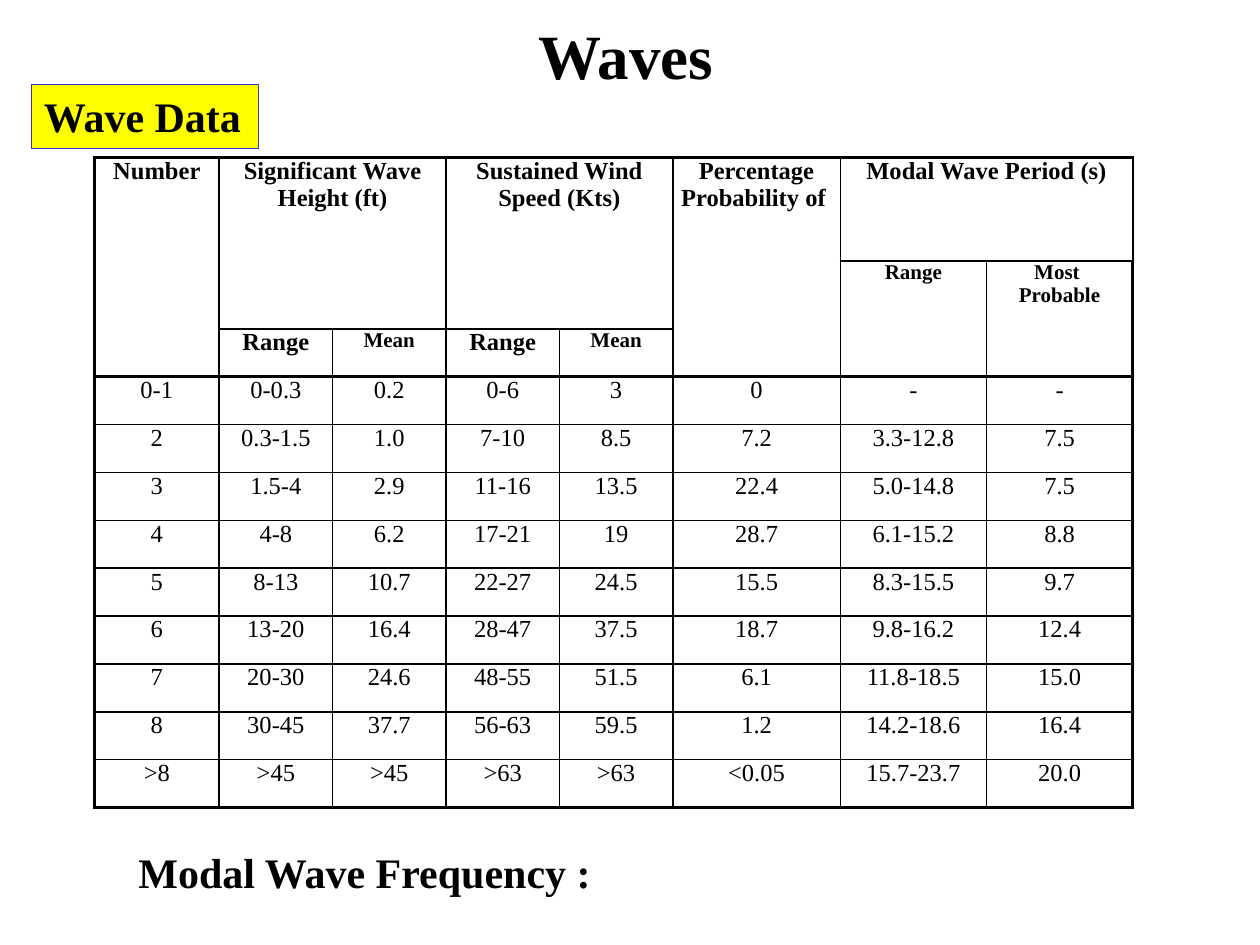
from lxml import etree
from pptx import Presentation, util as u
from pptx.dml import color
from pptx.enum import shapes, text
from pptx.oxml import ns

rgb = color.RGBColor.from_string
deck = Presentation()
deck.slide_width, deck.slide_height = u.Inches(10), u.Inches(7.5)
X, Y = deck.slide_width / 100, deck.slide_height / 100  # one percent
page = deck.slides.add_slide(deck.slide_layouts[5])


def write(frame, words, size, bold, align):
    frame.text = words
    for para in frame.paragraphs:
        para.alignment = align
        look = {"name": "Times New Roman", "size": u.Pt(size), "bold": bold}
        for key, val in look.items():
            setattr(para.font, key, val)
        para.font.color.rgb = rgb("000000")


# Title and labels
title = page.shapes.title
label = page.shapes.add_shape(shapes.MSO_SHAPE.RECTANGLE, 0, 0, 0, 0)
label.shadow.inherit = False
label.fill.solid()
label.fill.fore_color.rgb = rgb("FFFF00")
label.line.color.rgb = rgb("3333CC")
label.line.width = u.Pt(0.75)
note = page.shapes.add_textbox(0, 0, 0, 0)

for box, words, size, left, top, wide, high in (
    (title, "Waves", 36, 41.7, 1.07, 16.2, 9.33),
    (label, "Wave Data", 24, 2.5, 8.93, 18, 6.8),
    (note, "Modal Wave Frequency :", 24, 10, 88.93, 38.2, 6.67),
):
    spot = {"left": left * X, "top": top * Y, "width": wide * X, "height": high * Y}
    for key, val in spot.items():
        setattr(box, key, int(val))
    form = {
        "word_wrap": False,
        "auto_size": text.MSO_AUTO_SIZE.SHAPE_TO_FIT_TEXT,
        "vertical_anchor": text.MSO_ANCHOR.TOP,
    }
    for key, val in form.items():
        setattr(box.text_frame, key, val)
    write(box.text_frame, words, size, True, text.PP_ALIGN.LEFT)

# Wave table
HEAD = 3
rows = [
    ["Number", "Significant Wave Height (ft)", "", "Sustained Wind Speed (Kts)", "",
     "Percentage Probability of ", "Modal Wave Period (s)", ""],
    ["", "", "", "", "", "", "Range", "Most \nProbable"],
    ["", "Range", "Mean", "Range", "Mean", "", "", ""],
    ["0-1", "0-0.3", "0.2", "0-6", "3", "0", "-", "-"],
    ["2", "0.3-1.5", "1.0", "7-10", "8.5", "7.2", "3.3-12.8", "7.5"],
    ["3", "1.5-4", "2.9", "11-16", "13.5", "22.4", "5.0-14.8", "7.5"],
    ["4", "4-8", "6.2", "17-21", "19", "28.7", "6.1-15.2", "8.8"],
    ["5", "8-13", "10.7", "22-27", "24.5", "15.5", "8.3-15.5", "9.7"],
    ["6", "13-20", "16.4", "28-47", "37.5", "18.7", "9.8-16.2", "12.4"],
    ["7", "20-30", "24.6", "48-55", "51.5", "6.1", "11.8-18.5", "15.0"],
    ["8", "30-45", "37.7", "56-63", "59.5", "1.2", "14.2-18.6", "16.4"],
    [">8", ">45", ">45", ">63", ">63", "<0.05", "15.7-23.7", "20.0"],
]
wides = [9.9] + [9] * 4 + [13.3] + [11.6] * 2
highs = [10.93, 7.2] + [5.07] * 10
pairs = [(0, 1), (0, 3), (0, 6), (1, 1), (1, 3)]  # cells two columns wide
small = [(1, 6), (1, 7), (2, 2), (2, 4)]
# cells with no line above them
loose = [(1, col) for col in range(6)] + [(2, col) for col in (0, 5, 6, 7)]

grid = page.shapes.add_table(
    len(rows), len(wides), int(7.5 * X), int(16.67 * Y),
    int(sum(wides) * X), int(sum(highs) * Y)).table
grid.first_row = grid.horz_banding = False
for col, wide in zip(grid.columns, wides):
    col.width = int(wide * X)
for row, high in zip(grid.rows, highs):
    row.height = int(high * Y)
for r, c in pairs:
    grid.cell(r, c).merge(grid.cell(r, c + 1))


def edge(cell, tag, place, width):
    """Draw one border of a cell; a width of 0 hides it."""
    line = etree.Element(ns.qn("a:" + tag), w=str(u.Pt(width)))
    if width:
        fill = etree.SubElement(line, ns.qn("a:solidFill"))
        etree.SubElement(fill, ns.qn("a:srgbClr"), val="000000")
    else:
        etree.SubElement(line, ns.qn("a:noFill"))
    cell._tc.get_or_add_tcPr().insert(place, line)


for r, row in enumerate(rows):
    for c, words in enumerate(row):
        cell = grid.cell(r, c)
        pads = {"margin_left": 0.04, "margin_right": 0.04,
                "margin_top": 0, "margin_bottom": 0}
        for key, val in pads.items():
            setattr(cell, key, u.Inches(val))
        cell.fill.background()
        size = 12 if (r, c) in small else 14
        write(cell.text_frame, words, size, r < HEAD, text.PP_ALIGN.CENTER)

        end = c + 1 + ((r, c) in pairs)
        sides = []
        for x in (c, end):
            outer = 1.5 if r == 0 and x else 2.25
            inner = 0 if (r, x - 1) in pairs else 1
            sides.append(outer if x in (0, len(wides)) else inner)
        for y in (r, r + 1):
            thin = 0 if (y, c) in loose else 1
            sides.append(2.25 if y in (0, HEAD, len(rows)) else thin)
        for place, tag in enumerate(("lnL", "lnR", "lnT", "lnB")):
            edge(cell, tag, place, sides[place])

deck.save("out.pptx")
